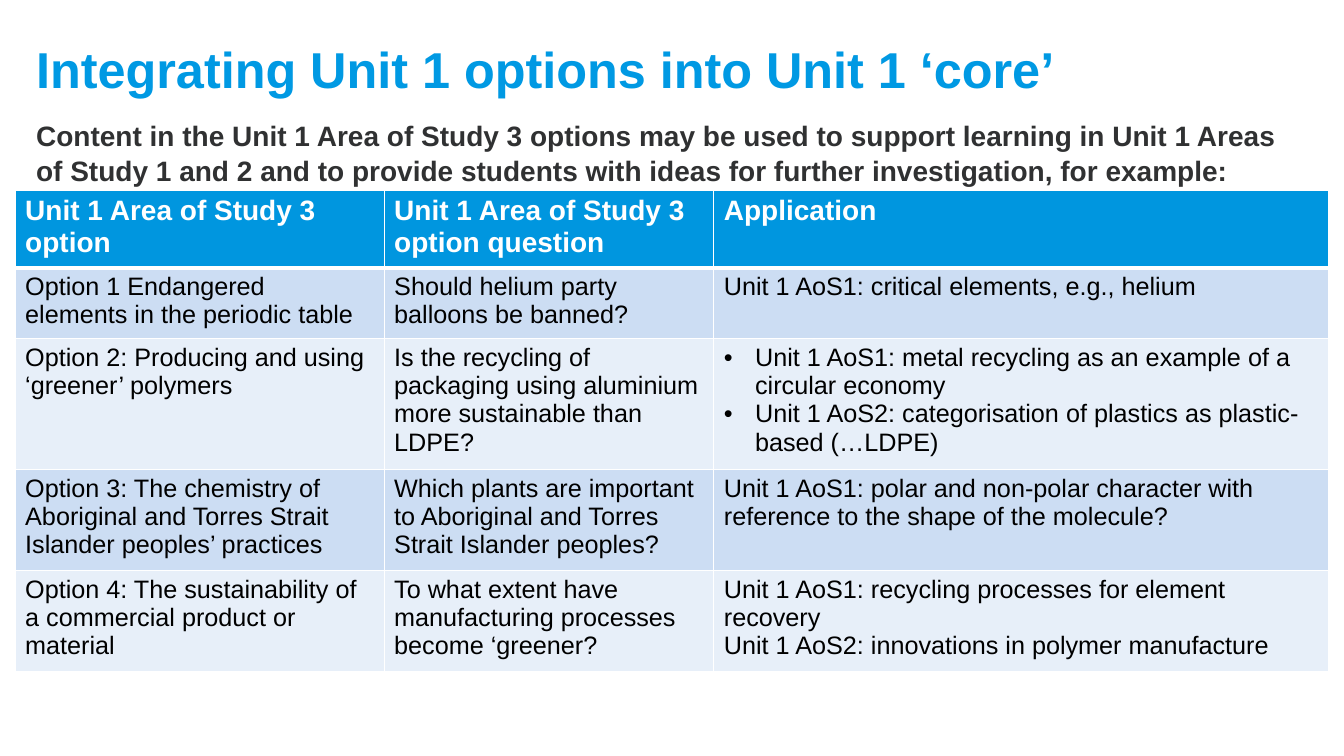
from dataclasses import dataclass

import pptx
import pptx.dml.color
import pptx.enum.text
import pptx.oxml.ns
import pptx.util
from lxml import etree

Inches = pptx.util.Inches
Pt = pptx.util.Pt
qn = pptx.oxml.ns.qn


@dataclass(frozen=True)
class Theme:
    font: str = "Arial"
    title_color: str = "0099E3"
    lead_color: str = "303132"
    header_fill: str = "0096DF"
    header_text: str = "FFFFFF"
    cell_text: str = "000000"
    border: str = "FFFFFF"
    bands: tuple = ("CCDDF3", "E7EFF9")
    title_size: int = 36
    heading_size: int = 20
    cell_size: int = 18


THEME = Theme()
TITLE = "Integrating Unit 1 options into Unit 1 ‘core’"
LEAD = (
    "Content in the Unit 1 Area of Study 3 options may be used to support learning "
    "in Unit 1 Areas of Study 1 and 2 and to provide students with ideas for further "
    "investigation, for example:"
)
OPTION_ROWS = [
    ["Unit 1 Area of Study 3 option", "Unit 1 Area of Study 3 option question", "Application"],
    [
        "Option 1 Endangered elements in the periodic table",
        "Should helium party balloons be banned?",
        "Unit 1 AoS1: critical elements, e.g., helium",
    ],
    [
        "Option 2: Producing and using ‘greener’ polymers",
        "Is the recycling of packaging using aluminium more sustainable than LDPE?",
        "Unit 1 AoS1: metal recycling as an example of a circular economy\n"
        "Unit 1 AoS2: categorisation of plastics as plastic-based (…LDPE)",
    ],
    [
        "Option 3: The chemistry of Aboriginal and Torres Strait Islander peoples’ practices",
        "Which plants are important to Aboriginal and Torres Strait Islander peoples?",
        "Unit 1 AoS1: polar and non-polar character with reference to the shape of the molecule?",
    ],
    [
        "Option 4: The sustainability of a commercial product or material",
        "To what extent have manufacturing processes become ‘greener?",
        "Unit 1 AoS1: recycling processes for element recovery\n"
        "Unit 1 AoS2: innovations in polymer manufacture",
    ],
]
COLUMN_WIDTHS = (3.66, 3.27, 6.1)
ROW_HEIGHTS = (0.71, 0.66, 1.22, 0.94, 0.94)
BULLETED_CELL = (2, 2)


def rgb(color):
    return pptx.dml.color.RGBColor.from_string(color)


def format_text(text_frame, size, color, bold):
    for paragraph in text_frame.paragraphs:
        for run in paragraph.runs:
            run.font.name = THEME.font
            run.font.size = Pt(size)
            run.font.bold = bold
            run.font.color.rgb = rgb(color)


def add_text(slide, text, top, height, size, color, anchor):
    box = slide.shapes.add_textbox(Inches(0.26), Inches(top), Inches(12.7), Inches(height))
    text_frame = box.text_frame
    text_frame.word_wrap = True
    text_frame.vertical_anchor = anchor
    text_frame.text = text
    format_text(text_frame, size, color, True)
    return text_frame


def add_bullets(text_frame):
    indent = Inches(0.31)
    for paragraph in text_frame.paragraphs:
        properties = paragraph._p.get_or_add_pPr()
        properties.set("marL", str(indent))
        properties.set("indent", str(-indent))
        etree.SubElement(properties, qn("a:buFont"), typeface=THEME.font)
        etree.SubElement(properties, qn("a:buChar"), char="•")


def set_borders(cell, bottom_width):
    properties = cell._tc.get_or_add_tcPr()
    for side, width in (("L", 1), ("R", 1), ("T", 1), ("B", bottom_width)):
        line = etree.SubElement(properties, qn(f"a:ln{side}"), w=str(Pt(width)))
        fill = etree.SubElement(line, qn("a:solidFill"))
        etree.SubElement(fill, qn("a:srgbClr"), val=THEME.border)


def style_cell(cell, row_index):
    is_header = row_index == 0
    set_borders(cell, 3 if is_header else 1)
    cell.fill.solid()
    if is_header:
        cell.fill.fore_color.rgb = rgb(THEME.header_fill)
        format_text(cell.text_frame, THEME.heading_size, THEME.header_text, True)
    else:
        cell.fill.fore_color.rgb = rgb(THEME.bands[(row_index - 1) % 2])
        format_text(cell.text_frame, THEME.cell_size, THEME.cell_text, False)


def add_options_table(slide):
    frame = slide.shapes.add_table(
        len(OPTION_ROWS), len(COLUMN_WIDTHS), Inches(0.15), Inches(1.89),
        Inches(sum(COLUMN_WIDTHS)), Inches(sum(ROW_HEIGHTS)),
    )
    table = frame.table
    for column, width in zip(table.columns, COLUMN_WIDTHS):
        column.width = Inches(width)
    for row, height in zip(table.rows, ROW_HEIGHTS):
        row.height = Inches(height)
    for row_index, texts in enumerate(OPTION_ROWS):
        for column_index, text in enumerate(texts):
            cell = table.cell(row_index, column_index)
            cell.text_frame.text = text
            style_cell(cell, row_index)
    add_bullets(table.cell(*BULLETED_CELL).text_frame)


def main():
    presentation = pptx.Presentation()
    presentation.slide_width = Inches(13.33)
    presentation.slide_height = Inches(7.5)
    slide = presentation.slides.add_slide(presentation.slide_layouts[6])
    anchors = pptx.enum.text.MSO_ANCHOR
    add_text(slide, TITLE, 0.25, 0.86, THEME.title_size, THEME.title_color, anchors.MIDDLE)
    lead = add_text(slide, LEAD, 1.11, 4.33, THEME.heading_size, THEME.lead_color, anchors.TOP)
    lead.paragraphs[0].line_spacing = 1.05
    add_options_table(slide)
    presentation.save("out.pptx")


if __name__ == "__main__":
    main()
